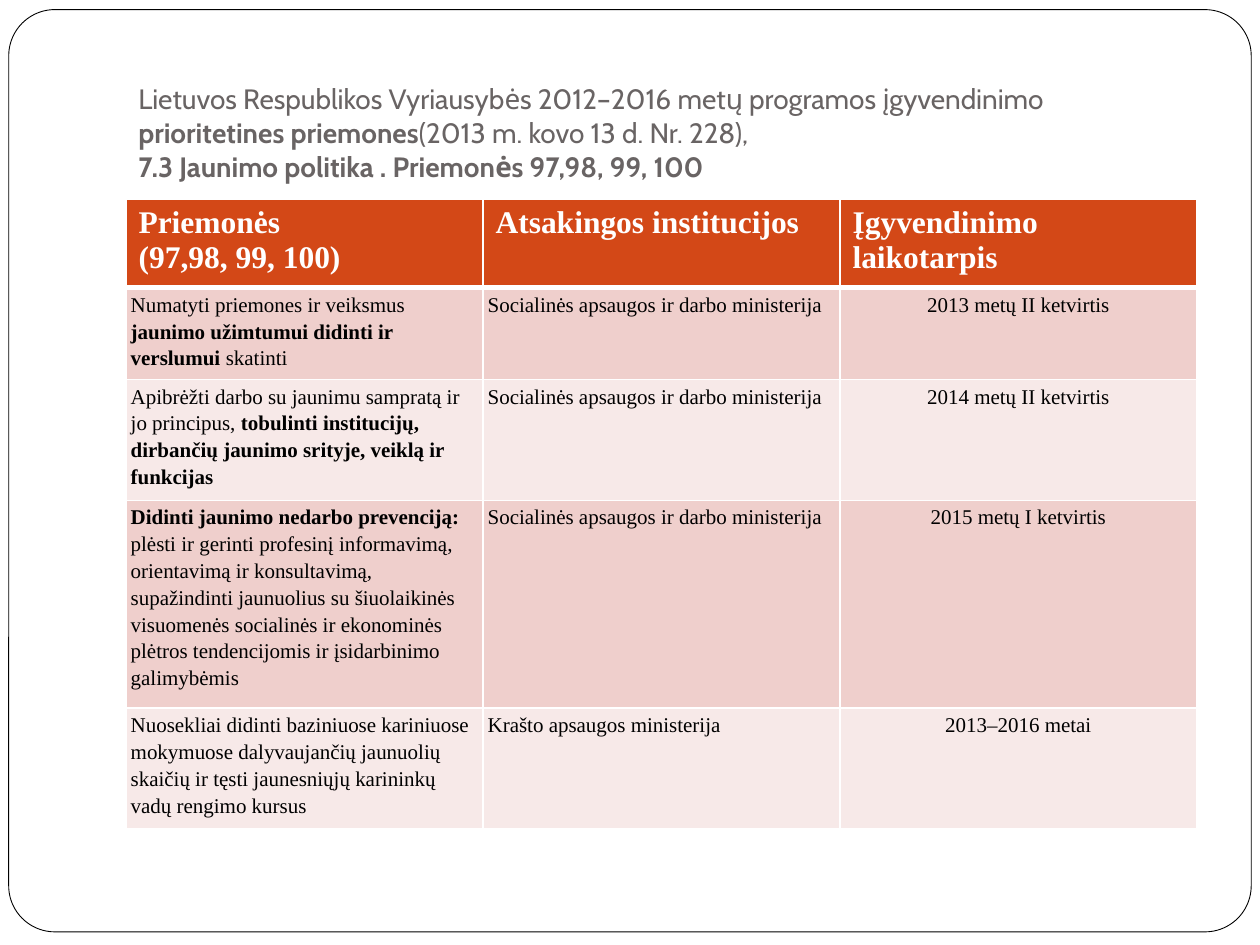
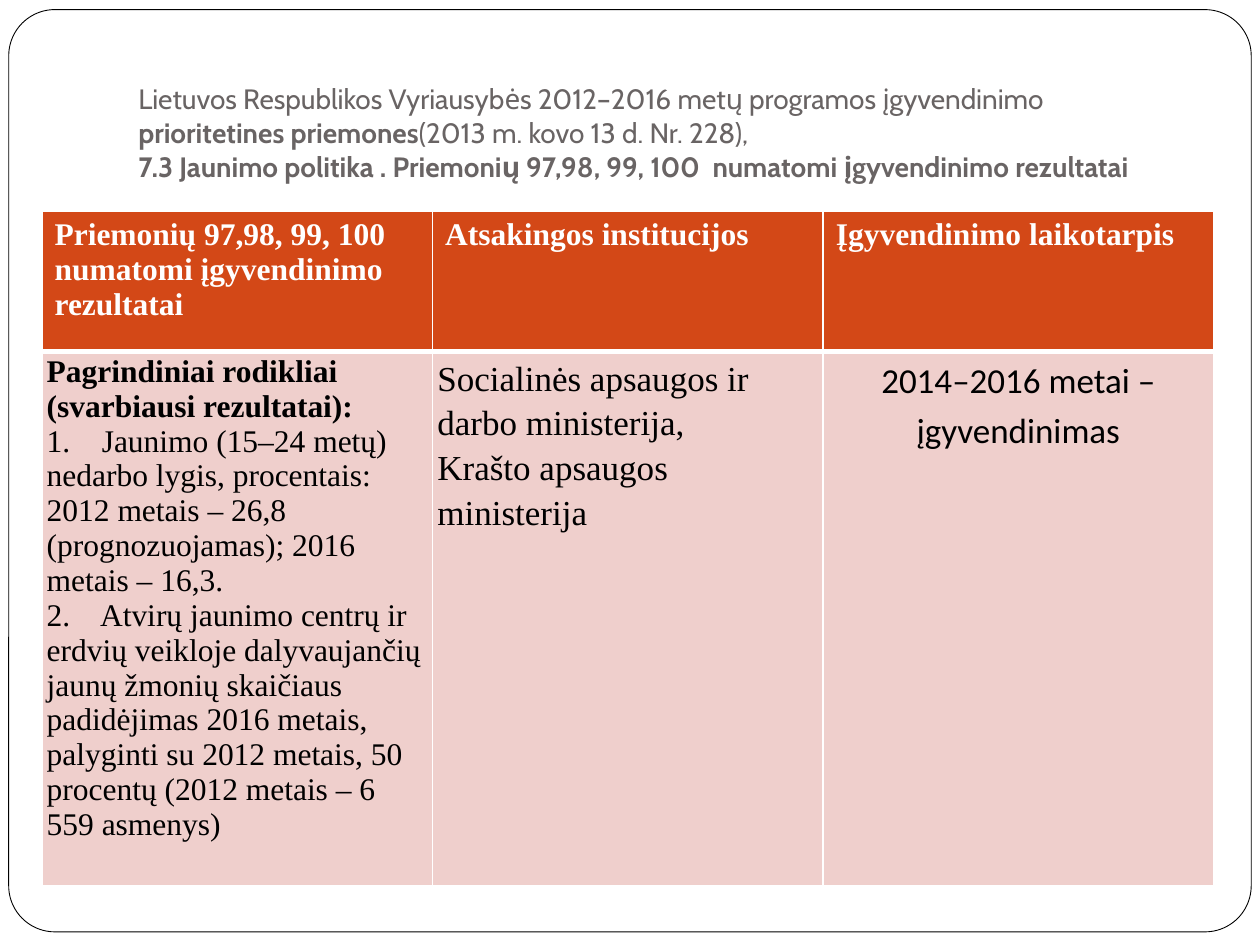
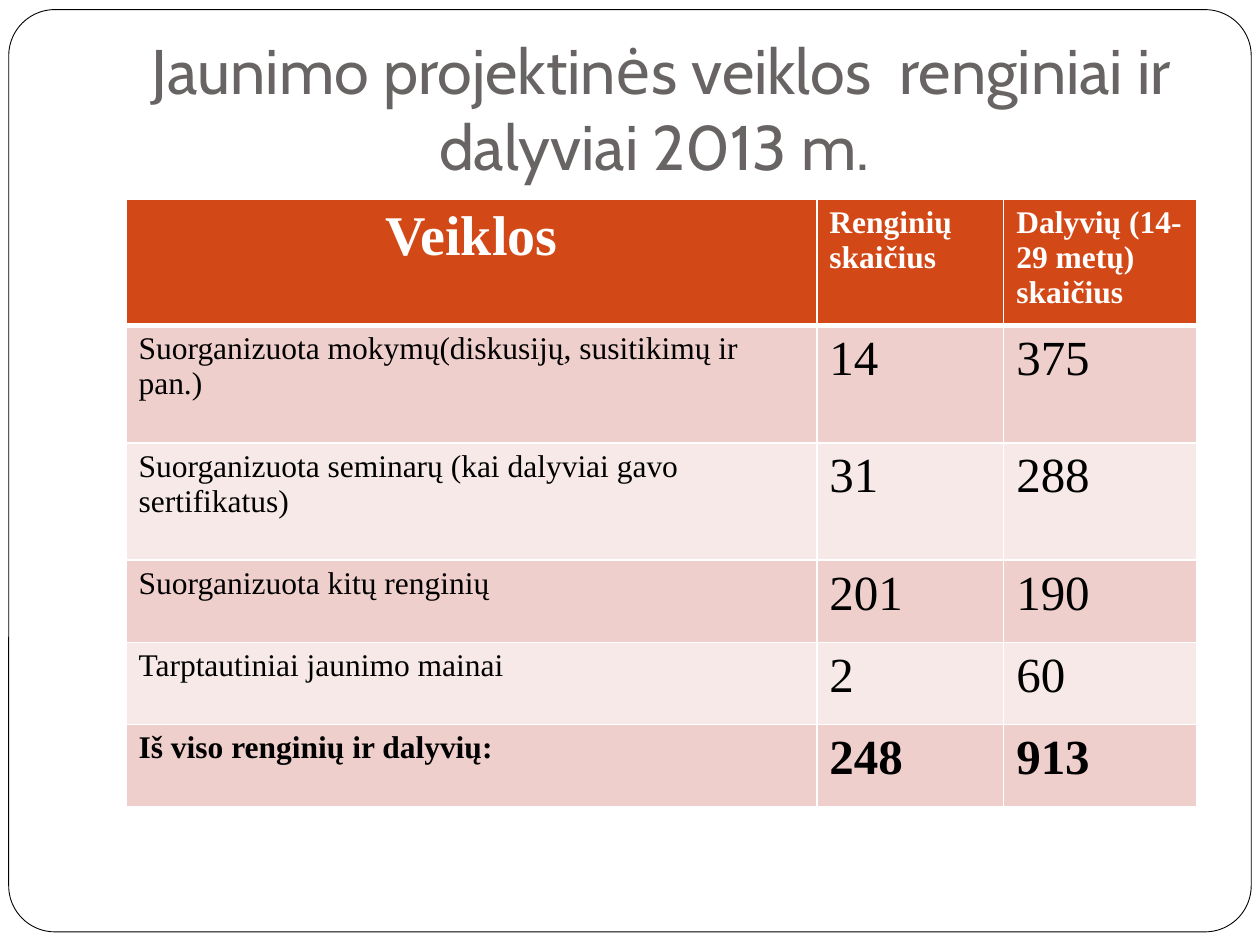
"""Build three slides on Lithuanian youth policy measures and project activities."""
from lxml import etree
from pptx import Presentation
from pptx.dml.color import RGBColor
from pptx.enum import shapes, text
from pptx.oxml import ns
from pptx.util import Pt

WHITE, BLACK, GREY, ORANGE = "FFFFFF", "000000", "696464", "D34817"
BANDS = ["EFCFCC", "F7E9E8"]
SERIF = "Times New Roman"
CENTER = text.PP_ALIGN.CENTER
WIDE_INSETS = (7.2, 3.6, 7.2, 3.6)
TIGHT_INSETS = (2.7, 1.4, 2.7, 1.4)


def color(value):
    return RGBColor.from_string(value)


class Deck:
    """Hold the shared style and the current slide."""

    def __init__(self):
        self.deck = Presentation()
        self.deck.slide_width, self.deck.slide_height = Pt(720), Pt(540)
        self.page = None

    def add_page(self):
        self.page = self.deck.slides.add_slide(self.deck.slide_layouts[6])
        frame = self.page.shapes.add_shape(
            shapes.MSO_SHAPE.ROUNDED_RECTANGLE, Pt(5), Pt(5.5), Pt(710), Pt(527))
        frame.adjustments[0] = 0.05
        frame.shadow.inherit = False
        frame.fill.solid()
        frame.fill.fore_color.rgb = color(WHITE)
        frame.line.color.rgb = color(BLACK)
        frame.line.width = Pt(0.5)

    def set_text(self, frame, content, ink, size=18, font=SERIF, bold=False,
                 align=None, spacing=None, after=None):
        """Set paragraphs split by newlines; asterisks toggle bold, \\v breaks a line."""
        frame.word_wrap = True
        for number, passage in enumerate(content.split("\n")):
            para = frame.add_paragraph() if number else frame.paragraphs[0]
            para.alignment = align
            para.line_spacing = spacing
            para.space_after = None if after is None else Pt(after)
            for row, line in enumerate(passage.split("\v")):
                if row:
                    para.add_line_break()
                for index, piece in enumerate(line.split("*")):
                    if piece:
                        span = para.add_run()
                        span.text = piece
                        span.font.size, span.font.name = Pt(size), font
                        span.font.bold = bold or index % 2 == 1
                        span.font.color.rgb = color(ink)

    def add_title(self, content, size=16, align=None):
        box = self.page.shapes.add_textbox(Pt(72), Pt(21.6), Pt(612), Pt(90))
        frame = box.text_frame
        frame.vertical_anchor = text.MSO_ANCHOR.BOTTOM
        frame.margin_left = frame.margin_right = frame.margin_bottom = Pt(7.2)
        frame.margin_top = Pt(3.6)
        self.set_text(frame, content, GREY, size, "Cabin", align=align)

    def add_borders(self, cell, top, bottom):
        """Draw white cell borders; they must come before the fill."""
        properties = cell._tc.get_or_add_tcPr()
        widths = {"a:lnL": 1, "a:lnR": 1, "a:lnT": top, "a:lnB": bottom}
        for index, (side, width) in enumerate(widths.items()):
            line = etree.Element(ns.qn(side), w=str(Pt(width)))
            fill = etree.SubElement(line, ns.qn("a:solidFill"))
            etree.SubElement(fill, ns.qn("a:srgbClr"), val=WHITE)
            properties.insert(index, line)

    def add_table(self, left, top, widths, heights, rows, body, heads=({}, {}, {}),
                  insets=TIGHT_INSETS):
        """Add a banded table whose heads and body columns each have a text style."""
        table = self.page.shapes.add_table(
            len(rows), len(widths), Pt(left), Pt(top),
            Pt(sum(widths)), Pt(sum(heights))).table
        for column, width in zip(table.columns, widths):
            column.width = Pt(width)
        for index, (height, contents) in enumerate(zip(heights, rows)):
            table.rows[index].height = Pt(height)
            is_head = index == 0
            for column, content in enumerate(contents):
                cell = table.cell(index, column)
                (cell.margin_left, cell.margin_top, cell.margin_right,
                 cell.margin_bottom) = map(Pt, WIDE_INSETS if is_head else insets)
                cell.fill.solid()
                cell.fill.fore_color.rgb = color(
                    ORANGE if is_head else BANDS[(index - 1) % 2])
                self.add_borders(cell, 3 if index == 1 else 1, 3 if is_head else 1)
                if is_head:
                    self.set_text(cell.text_frame, content, WHITE, bold=True, **heads[column])
                else:
                    self.set_text(cell.text_frame, content, BLACK, **body[column])


PROGRAMME = ("Lietuvos Respublikos Vyriausybės 2012–2016 metų programos įgyvendinimo "
             "*prioritetines priemones*(2013 m. kovo 13 d. Nr. 228),\v"
             "*7.3 Jaunimo politika . {}*")
MINISTRY = "Socialinės apsaugos ir darbo ministerija"
DEFENCE = "Krašto apsaugos ministerija"
INSTITUTIONS, PERIOD = "Atsakingos institucijos", "Įgyvendinimo laikotarpis"

MEASURES = [
    ("Priemonės\n(97,98, 99, 100)", INSTITUTIONS, PERIOD),
    ("Numatyti priemones ir veiksmus *jaunimo užimtumui didinti ir verslumui *skatinti",
     MINISTRY, "2013 metų II ketvirtis"),
    ("Apibrėžti darbo su jaunimu sampratą ir jo principus, *tobulinti institucijų, "
     "dirbančių jaunimo srityje, veiklą ir funkcijas*",
     MINISTRY, "2014 metų II ketvirtis"),
    ("*Didinti jaunimo nedarbo prevenciją: *plėsti ir gerinti profesinį informavimą, "
     "orientavimą ir konsultavimą, supažindinti jaunuolius su šiuolaikinės visuomenės "
     "socialinės ir ekonominės plėtros tendencijomis ir įsidarbinimo galimybėmis",
     MINISTRY, "2015 metų I ketvirtis"),
    ("Nuosekliai didinti baziniuose kariniuose mokymuose dalyvaujančių jaunuolių skaičių "
     "ir tęsti jaunesniųjų karininkų vadų rengimo kursus",
     DEFENCE, "2013–2016 metai"),
]

RESULTS = [
    ("Priemonių 97,98, 99, 100 numatomi įgyvendinimo rezultatai", INSTITUTIONS, PERIOD),
    ("*Pagrindiniai rodikliai (svarbiausi rezultatai):*\n"
     "1.    Jaunimo (15–24 metų) nedarbo lygis, procentais: 2012 metais – 26,8 "
     "(prognozuojamas); 2016 metais – 16,3.\n"
     "2.    Atvirų jaunimo centrų ir erdvių veikloje dalyvaujančių jaunų žmonių "
     "skaičiaus padidėjimas 2016 metais, palyginti su 2012 metais, 50 procentų "
     "(2012 metais – 6 559 asmenys)",
     f"{MINISTRY},\n{DEFENCE}", "2014–2016 metai – įgyvendinimas"),
]

ACTIVITIES = [
    ("Veiklos", "Renginių skaičius", "Dalyvių (14-29 metų) skaičius"),
    ("Suorganizuota mokymų(diskusijų, susitikimų ir pan.)", "14", "375"),
    ("Suorganizuota seminarų (kai dalyviai gavo sertifikatus)", "31", "288"),
    ("Suorganizuota kitų renginių", "201", "190"),
    ("Tarptautiniai jaunimo mainai", "2", "60"),
    ("*Iš viso renginių ir dalyvių:*", "*248*", "*913*"),
]


def main():
    deck = Deck()

    deck.add_page()
    deck.add_title(PROGRAMME.format("Priemonės 97,98, 99, 100"))
    small = {"size": 12, "spacing": 1.15}
    deck.add_table(72, 114, [204] * 3, [47, 48.5, 64, 109.5, 64], MEASURES,
                   [small, small, {**small, "align": CENTER}])

    deck.add_page()
    deck.add_title(PROGRAMME.format(
        "Priemonių 97,98, 99, 100  numatomi įgyvendinimo rezultatai"))
    large = {"size": 20, "spacing": 1.15}
    deck.add_table(24, 120.5, [223.2] * 3, [80.5, 281], RESULTS,
                   [{}, large, {**large, "font": "Calibri", "align": CENTER, "after": 10}])

    deck.add_page()
    deck.add_title("Jaunimo projektinės veiklos  renginiai ir dalyviai 2013 m. ", 36, CENTER)
    count = {"size": 28}
    deck.add_table(72, 114, [394.8, 106.8, 110.4], [66.5, 67, 67, 47, 47, 47], ACTIVITIES,
                   [{}, count, count], [{"size": 32, "align": CENTER}, {}, {}],
                   WIDE_INSETS)

    deck.deck.save("out.pptx")


if __name__ == "__main__":
    main()
